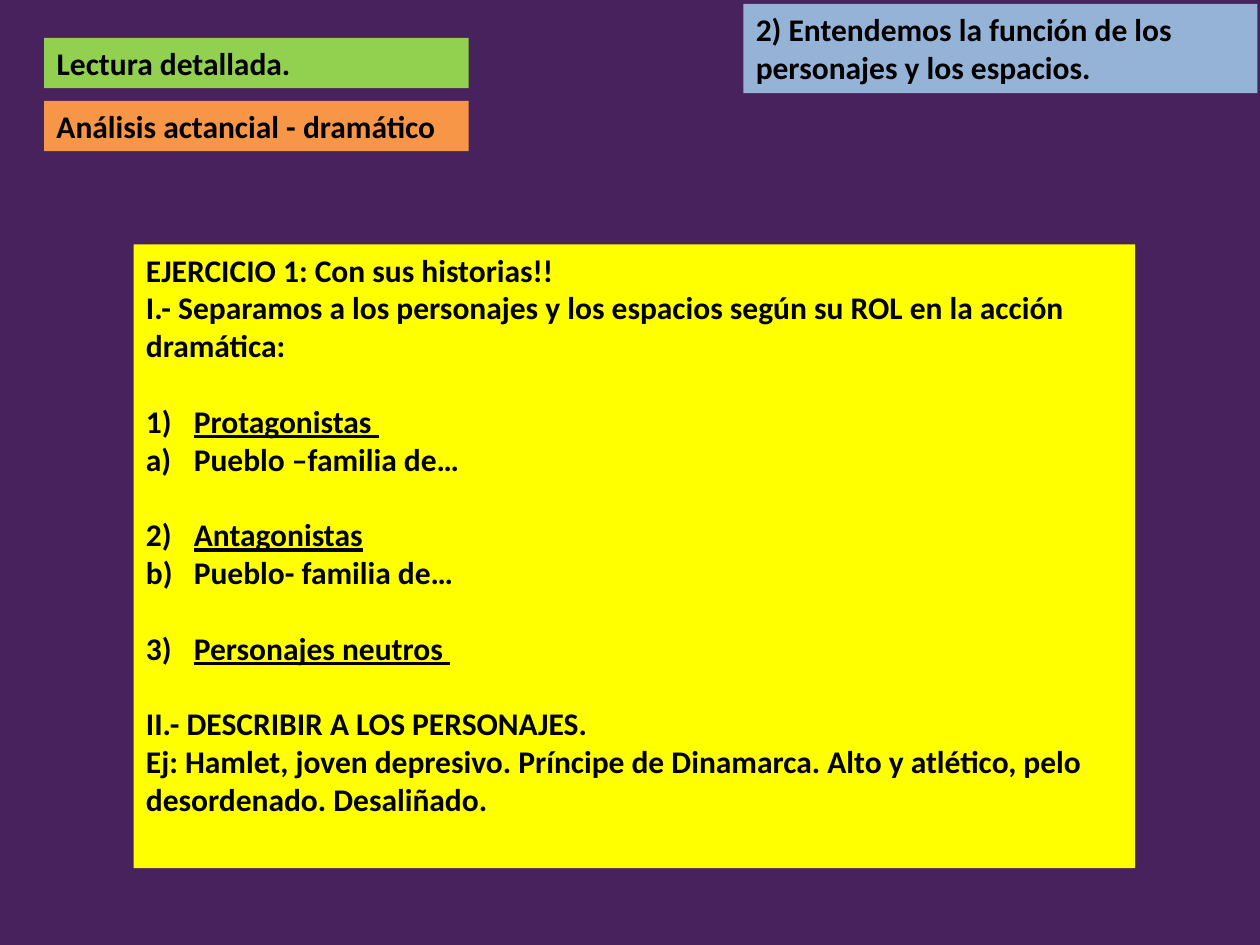
import pptx
import pptx.util
import pptx.dml.color
import pptx.enum.text
import pptx.oxml.ns
import lxml.etree

COLUMNS, ROWS = 100, 75
LINE_GAP = 21.6
INDENT = 0.38
EXERCISE = [
    ("EJERCICIO 1: Con sus historias!!", None, 1, False),
    ("I.- Separamos a los personajes y los espacios según su ROL en la acción dramática:", None, 1, False),
    ("Protagonistas ", "arabicParenR", 1, True),
    ("Pueblo –familia de…", "alphaLcParenR", 1, False),
    ("Antagonistas", "arabicParenR", 2, True),
    ("Pueblo- familia de…", "alphaLcParenR", 2, False),
    ("Personajes neutros ", "arabicParenR", 3, True),
    ("II.- DESCRIBIR A LOS PERSONAJES.", None, 1, True),
    ("Ej: Hamlet, joven depresivo. Príncipe de Dinamarca. Alto y atlético, pelo desordenado. Desaliñado.", None, 1, False),
]


def color(value):
    return pptx.dml.color.RGBColor.from_string(value)


def place(deck, box, area, fill):
    column, row, columns, rows = area
    box.left = round(deck.slide_width * column / COLUMNS)
    box.top = round(deck.slide_height * row / ROWS)
    box.width = round(deck.slide_width * columns / COLUMNS)
    box.height = round(deck.slide_height * rows / ROWS)
    box.fill.solid()
    box.fill.fore_color.rgb = color(fill)
    frame = box.text_frame
    frame.word_wrap = True
    frame.auto_size = pptx.enum.text.MSO_AUTO_SIZE.NONE
    frame.vertical_anchor = pptx.enum.text.MSO_ANCHOR.TOP


def format_text(paragraph):
    paragraph.alignment = pptx.enum.text.PP_ALIGN.LEFT
    for span in paragraph.runs:
        span.font.name = "Calibri"
        span.font.size = pptx.util.Pt(18)
        span.font.bold = True
        span.font.color.rgb = color("000000")


def number(paragraph, scheme, start):
    properties = paragraph._p.get_or_add_pPr()
    indent = pptx.util.Inches(INDENT)
    properties.set("marL", str(indent))
    properties.set("indent", str(-indent))
    bullet = lxml.etree.SubElement(properties, pptx.oxml.ns.qn("a:buAutoNum"))
    bullet.set("type", scheme)
    bullet.set("startAt", str(start))


def add_label(deck, box, area, fill, text):
    place(deck, box, area, fill)
    box.text_frame.text = text
    format_text(box.text_frame.paragraphs[0])


def add_exercise(deck, box, area):
    place(deck, box, area, "FFFF00")
    frame = box.text_frame
    frame.text = "\n".join(item[0] for item in EXERCISE)
    for paragraph, (text, scheme, start, opens_group) in zip(frame.paragraphs, EXERCISE):
        if scheme:
            number(paragraph, scheme, start)
        format_text(paragraph)
        if opens_group:
            paragraph.space_before = pptx.util.Pt(LINE_GAP)
            if scheme:
                paragraph.runs[0].font.underline = True


def add_textbox(page):
    return page.shapes.add_textbox(0, 0, 0, 0)


def build_page(deck):
    page = deck.slides.add_slide(deck.slide_layouts.get_by_name("Title Only"))
    page.background.fill.solid()
    page.background.fill.fore_color.rgb = color("47225C")
    add_label(deck, page.shapes.title, (3.5, 3, 33.7, 4), "92D050", "Lectura detallada.")
    add_label(deck, add_textbox(page), (3.5, 8, 33.7, 4), "F79646", "Análisis actancial - dramático")
    add_label(deck, add_textbox(page), (59, 0.3, 40.8, 7.1), "95B3D7",
              "2) Entendemos la función de los personajes y los espacios.")
    add_exercise(deck, add_textbox(page), (10.6, 19.4, 79.5, 49.5))


def main():
    deck = pptx.Presentation()
    deck.slide_width = pptx.util.Inches(10)
    deck.slide_height = pptx.util.Inches(7.5)
    build_page(deck)
    deck.save("out.pptx")


if __name__ == "__main__":
    main()
